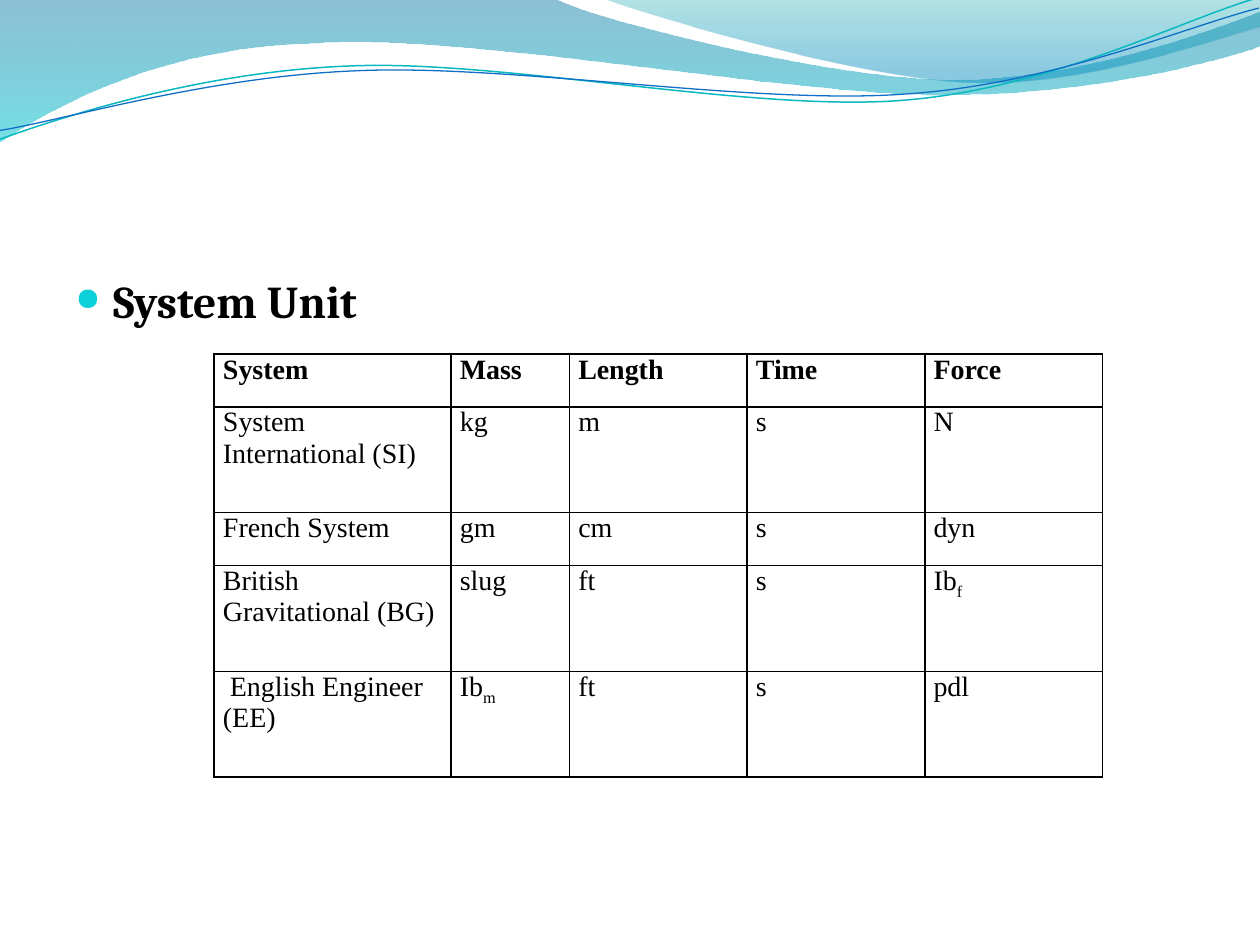
import lxml.etree
import pptx
import pptx.dml.color
import pptx.oxml
import pptx.oxml.ns
import pptx.util

Inches = pptx.util.Inches
Pt = pptx.util.Pt
RGBColor = pptx.dml.color.RGBColor
qn = pptx.oxml.ns.qn

BLACK = RGBColor(0x00, 0x00, 0x00)
DEEP_BLUE = RGBColor(0x00, 0x74, 0xA1)
TURQUOISE = RGBColor(0x00, 0xC6, 0xCF)
TEAL = RGBColor(0x00, 0xA1, 0xA9)
SKY_BLUE = RGBColor(0x00, 0x8B, 0xBF)
LINE_TEAL = RGBColor(0x0A, 0xB8, 0xBF)
LINE_BLUE = RGBColor(0x0F, 0x6F, 0xC6)
BULLET_CYAN = RGBColor(0x0B, 0xD0, 0xD9)


def draw_wave(shapes, start, segments, closed):
    """Draw a freeform; a segment is one line end (x, y) or six cubic Bezier values."""
    builder = shapes.build_freeform(Inches(start[0]), Inches(start[1]))
    for segment in segments:
        corners = [(Inches(x), Inches(y)) for x, y in zip(segment[::2], segment[1::2])]
        builder.add_line_segments(corners, close=False)
    wave = builder.convert_to_shape()
    wave.shadow.inherit = False

    # Join the three points of each Bezier segment into one curve
    outline = next(wave.element.iter(qn("a:path")))
    line_nodes = iter(outline.findall(qn("a:lnTo")))
    for segment in segments:
        node = next(line_nodes)
        if len(segment) == 6:
            curve = lxml.etree.Element(qn("a:cubicBezTo"))
            node.addprevious(curve)
            for point_node in (node, next(line_nodes), next(line_nodes)):
                curve.append(point_node[0])
                outline.remove(point_node)
    if closed:
        lxml.etree.SubElement(outline, qn("a:close"))
    return wave


def write_span(para, text, size, font, bold):
    span = para.add_run()
    span.text = text
    for name, value in {"size": Pt(size), "name": font, "bold": bold}.items():
        setattr(span.font, name, value)
    span.font.color.rgb = BLACK
    return span


deck = pptx.Presentation()
deck.slide_width, deck.slide_height = Inches(10), Inches(7.5)
page = deck.slides.add_slide(deck.slide_layouts[6])

# Filled waves: start, segments, gradient stops (position, colour, opacity in percent)
filled_waves = [
    ((0, 0),
     [(4.4, -0.01), (4.76, 0.17, 6.64, 0.63, 7.58, 0.63),
      (8.53, 0.63, 9.58, 0.26, 10, 0.09), (10.01, 0.36),
      (9.83, 0.44, 8.7, 0.76, 7.46, 0.75), (6.22, 0.75, 3.82, 0.28, 2.57, 0.34),
      (1.29, 0.36, 0.46, 0.83, -0.01, 1.13), (0, 0)],
     [(0, DEEP_BLUE, 45), (1, TURQUOISE, 55)]),
    ((4.79, -0.01),
     [(5.09, 0.11, 6.82, 0.62, 7.69, 0.65), (8.56, 0.69, 9.61, 0.32, 10, 0.21),
      (10, 0), (4.79, -0.01)],
     [(0, TEAL, 30), (0.8, SKY_BLUE, 45)]),
]
for start, segments, stops in filled_waves:
    wave = draw_wave(page.shapes, start, segments, True)
    wave.line.fill.background()
    wave.fill.gradient()
    wave.fill.gradient_angle = 270
    for stop, (position, colour, _) in zip(wave.fill.gradient_stops, stops):
        stop.position = position
        stop.color.rgb = colour
    for node, (_, _, opacity) in zip(wave.element.spPr.iter(qn("a:srgbClr")), stops):
        lxml.etree.SubElement(node, qn("a:alpha"), val=str(opacity * 1000))

# Line waves, tilted after drawing: start, segments, colour, width
line_waves = [
    ((-0.02, 0.87),
     [(0.47, 0.72, 1.58, 0.41, 2.77, 0.42), (3.96, 0.42, 5.91, 0.93, 7.12, 0.9),
      (8.32, 0.87, 9.4, 0.36, 10, 0.22)], LINE_TEAL, 0.85),
    ((-0.02, 0.8),
     [(0.46, 0.75, 1.64, 0.45, 2.83, 0.46), (4.04, 0.46, 5.96, 0.88, 7.16, 0.85),
      (8.35, 0.83, 9.42, 0.42, 10.01, 0.3)], LINE_BLUE, 0.75),
]
for start, segments, colour, width in line_waves:
    wave = draw_wave(page.shapes, start, segments, False)
    wave.rotation = 357.3
    wave.fill.background()
    wave.line.color.rgb = colour
    wave.line.width = Pt(width)

# Bulleted heading
heading = page.shapes.add_textbox(Inches(0.5), Inches(2.12), Inches(9), Inches(0.54))
heading.text_frame.word_wrap = True
para = heading.text_frame.paragraphs[0]
write_span(para, "System Unit", 26, "Cambria", True)
para_format = para._p.get_or_add_pPr()
para_format.set("marL", str(Inches(0.3)))
para_format.set("indent", str(Inches(-0.3)))
bullet_colour = lxml.etree.SubElement(para_format, qn("a:buClr"))
lxml.etree.SubElement(bullet_colour, qn("a:srgbClr"), val=str(BULLET_CYAN))
lxml.etree.SubElement(para_format, qn("a:buSzPct"), val="70000")
lxml.etree.SubElement(para_format, qn("a:buChar"), char="●")

# Table of units; a tuple holds a base and its subscript
unit_rows = [
    ["System", "Mass", "Length", "Time", "Force"],
    ["System International (SI)", "kg", "m", "s", "N"],
    ["French System", "gm", "cm", "s", "dyn"],
    ["British Gravitational (BG)", "slug", "ft", "s", ("Ib", "f")],
    [" English Engineer (EE)", ("Ib", "m"), "ft", "s", "pdl"],
]
column_widths = [1.88, 0.94, 1.41, 1.41, 1.41]
row_heights = [0.42, 0.84, 0.42, 0.84, 0.84]
cell_margins = {"margin_left": Inches(0.07), "margin_right": Inches(0.07),
                "margin_top": 0, "margin_bottom": 0}
table = page.shapes.add_table(
    len(unit_rows), len(column_widths), Inches(1.7), Inches(2.81),
    Inches(sum(column_widths)), Inches(sum(row_heights))).table
table.first_row = table.horz_banding = False
for column, width in zip(table.columns, column_widths):
    column.width = Inches(width)
for row, height in zip(table.rows, row_heights):
    row.height = Inches(height)

for row_index, units in enumerate(unit_rows):
    for column_index, unit in enumerate(units):
        cell = table.cell(row_index, column_index)
        for name, value in cell_margins.items():
            setattr(cell, name, value)
        parts = unit if isinstance(unit, tuple) else (unit,)
        for part_index, part in enumerate(parts):
            span = write_span(cell.text_frame.paragraphs[0], part, 16,
                              "Times New Roman", row_index == 0)
            if part_index == 1:
                span.font._element.set("baseline", "-25000")
        cell_format = cell._tc.get_or_add_tcPr()
        for side in ("a:lnL", "a:lnR", "a:lnT", "a:lnB"):
            border = lxml.etree.SubElement(cell_format, qn(side), w=str(Pt(1)))
            border_fill = lxml.etree.SubElement(border, qn("a:solidFill"))
            lxml.etree.SubElement(border_fill, qn("a:srgbClr"), val=str(BLACK))
        cell.fill.background()

deck.save("out.pptx")
